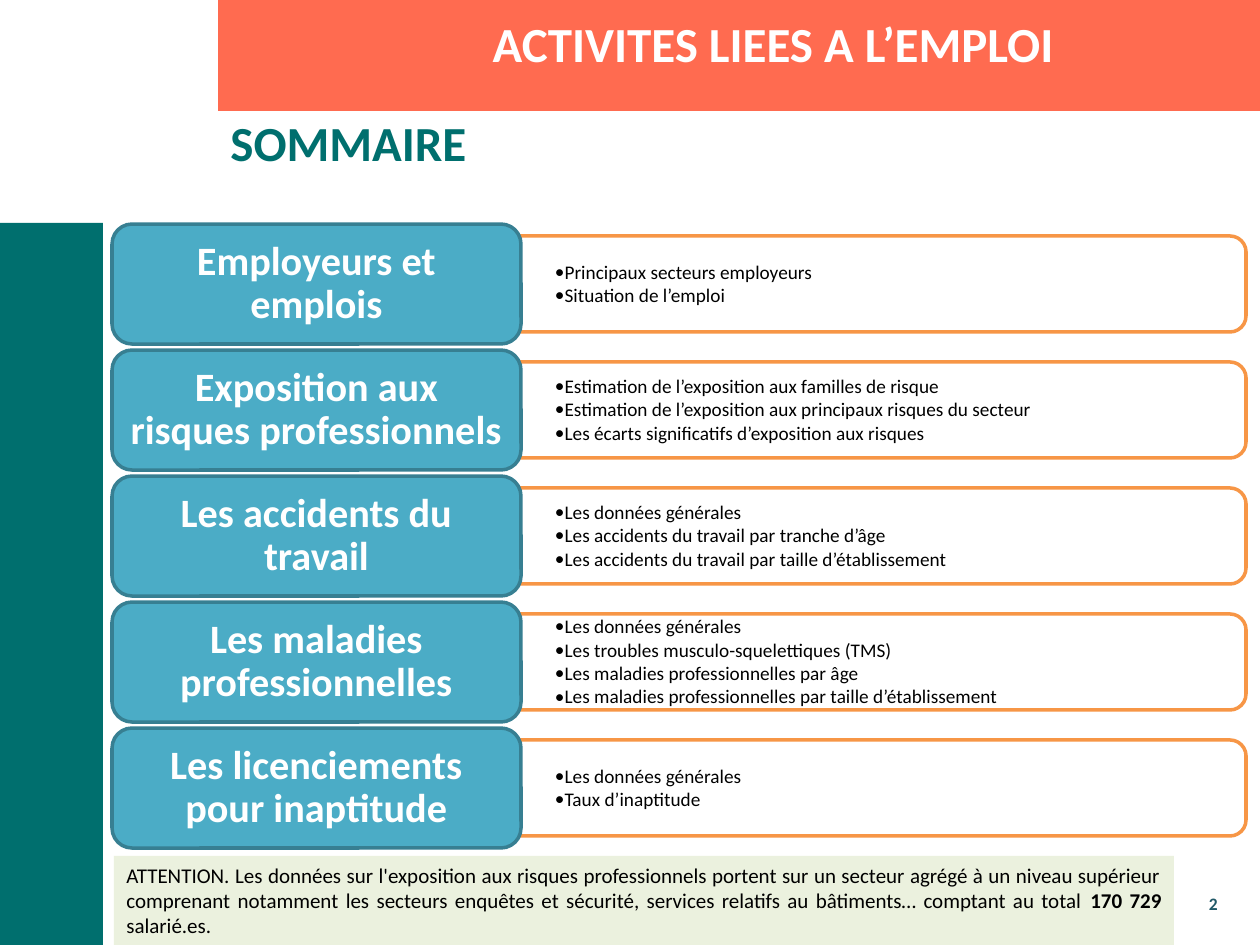
from dataclasses import dataclass

from lxml import etree
from pptx import Presentation
from pptx.dml.color import RGBColor
from pptx.enum.shapes import MSO_SHAPE
from pptx.enum.text import MSO_ANCHOR, PP_ALIGN
from pptx.oxml.ns import qn
from pptx.util import Emu, Pt

PX_PER_INCH = 126
FONT = "Calibri"
CORAL, GREEN, WHITE, BLACK = "FF6B50", "006F6E", "FFFFFF", "000000"
BLUE, BLUE_EDGE, ORANGE = "4BACC6", "377F92", "F79646"
PALE_GREEN, DARK_TEAL = "EBF1DE", "215968"
FIRST_ROW_TOP, ROW_PITCH = 224, 126


@dataclass(frozen=True)
class Box:
    """A rectangle in px."""
    left: int
    top: int
    width: int
    height: int

    def emu(self) -> list[Emu]:
        """Return the four lengths in EMU."""
        return [px(v) for v in (self.left, self.top, self.width, self.height)]


@dataclass(frozen=True)
class Chapter:
    """A chapter title with its topics."""
    title: str
    topics: tuple[str, ...]


CHAPTERS = (
    Chapter("Employeurs et emplois",
            ("Principaux secteurs employeurs", "Situation de l’emploi")),
    Chapter("Exposition aux risques professionnels",
            ("Estimation de l’exposition aux familles de risque",
             "Estimation de l’exposition aux principaux risques du secteur",
             "Les écarts significatifs d’exposition aux risques")),
    Chapter("Les accidents du travail",
            ("Les données générales",
             "Les accidents du travail par tranche d’âge",
             "Les accidents du travail par taille d’établissement")),
    Chapter("Les maladies professionnelles",
            ("Les données générales",
             "Les troubles musculo-squelettiques (TMS)",
             "Les maladies professionnelles par âge",
             "Les maladies professionnelles par taille d’établissement")),
    Chapter("Les licenciements pour inaptitude",
            ("Les données générales", "Taux d’inaptitude")),
)


def px(length: int) -> Emu:
    """Turn px into EMU."""
    return Emu(round(length * 914400 / PX_PER_INCH))


def color(value: str) -> RGBColor:
    """Turn a hex string into a colour."""
    return RGBColor.from_string(value)


def add_panel(slide, kind: MSO_SHAPE, box: Box, fill: str, edge: str | None = None):
    """Draw a filled shape with an optional outline."""
    panel = slide.shapes.add_shape(kind, *box.emu())
    panel.shadow.inherit = False
    panel.fill.solid()
    panel.fill.fore_color.rgb = color(fill)
    if edge:
        panel.line.color.rgb = color(edge)
        panel.line.width = Pt(2)
    else:
        panel.line.fill.background()
    return panel


def add_frame(slide, box: Box, anchor=MSO_ANCHOR.TOP):
    """Add a wrapping text box and return its frame."""
    frame = slide.shapes.add_textbox(*box.emu()).text_frame
    frame.word_wrap = True
    frame.vertical_anchor = anchor
    return frame


def add_run(paragraph, text: str, size: int, ink: str, bold: bool = False) -> None:
    """Append a styled run."""
    run = paragraph.add_run()
    run.text = text
    run.font.name = FONT
    run.font.size = Pt(size)
    run.font.bold = bold
    run.font.color.rgb = color(ink)


def add_line(slide, box: Box, text: str, size: int, ink: str, align: PP_ALIGN,
             anchor=MSO_ANCHOR.TOP):
    """Add a bold text of one paragraph and return the paragraph."""
    paragraph = add_frame(slide, box, anchor).paragraphs[0]
    paragraph.alignment = align
    add_run(paragraph, text, size, ink, True)
    return paragraph


def add_topics(slide, box: Box, topics: tuple[str, ...]) -> None:
    """Write the bulleted topics of a chapter."""
    frame = add_frame(slide, box, MSO_ANCHOR.MIDDLE)
    frame.margin_left = frame.margin_right = px(35)
    frame.margin_top = frame.margin_bottom = px(18)
    for index, topic in enumerate(topics):
        paragraph = frame.add_paragraph() if index else frame.paragraphs[0]
        properties = paragraph._p.get_or_add_pPr()
        properties.set("marL", str(px(8)))
        properties.set("indent", str(px(-8)))
        etree.SubElement(properties, qn("a:buFont"), typeface=FONT)
        etree.SubElement(properties, qn("a:buChar"), char="•")
        paragraph.level = 1
        paragraph.line_spacing = 0.9
        paragraph.space_after = Pt(1.5)
        paragraph.font.size = Pt(11)
        add_run(paragraph, topic, 11, BLACK)


def add_chapter(slide, top: int, chapter: Chapter) -> None:
    """Draw one row: the topics panel, then the title tile over its edge."""
    width, height = 726, 96
    center_x, center_y = 520 + width // 2, top + 60
    upright = Box(center_x - height // 2, center_y - width // 2, height, width)
    panel = add_panel(slide, MSO_SHAPE.ROUND_2_SAME_RECTANGLE, upright, WHITE, ORANGE)
    panel.rotation = 90
    add_topics(slide, Box(520, top + 17, 721, 87), chapter.topics)
    add_panel(slide, MSO_SHAPE.ROUNDED_RECTANGLE, Box(112, top, 409, 120), BLUE, BLUE_EDGE)
    title = add_line(slide, Box(118, top + 6, 397, 108), chapter.title, 23, WHITE,
                     PP_ALIGN.CENTER, MSO_ANCHOR.MIDDLE)
    title.line_spacing = 0.9


def add_warning(slide) -> None:
    """Draw the warning at the foot of the slide."""
    warning = add_panel(slide, MSO_SHAPE.RECTANGLE, Box(114, 856, 1060, 89), PALE_GREEN)
    frame = warning.text_frame
    frame.word_wrap = True
    frame.vertical_anchor = MSO_ANCHOR.TOP
    paragraph = frame.paragraphs[0]
    paragraph.alignment = PP_ALIGN.JUSTIFY
    add_run(paragraph, "ATTENTION. Les données sur l'exposition aux risques professionnels "
            "portent sur un secteur agrégé à un niveau supérieur comprenant notamment les "
            "secteurs enquêtes et sécurité, services relatifs au bâtiments… comptant au "
            "total ", 12, BLACK)
    add_run(paragraph, "170 729", 12, BLACK, True)
    add_run(paragraph, " salarié.es.", 12, BLACK)


def main() -> None:
    """Build the slide and save it."""
    deck = Presentation()
    deck.slide_width, deck.slide_height = px(1260), px(945)
    slide = deck.slides.add_slide(deck.slide_layouts[6])
    add_panel(slide, MSO_SHAPE.RECTANGLE, Box(218, 0, 1042, 111), CORAL)
    add_line(slide, Box(1101, 884, 129, 40), "2", 10, DARK_TEAL, PP_ALIGN.RIGHT,
             MSO_ANCHOR.MIDDLE)
    add_panel(slide, MSO_SHAPE.RECTANGLE, Box(0, 223, 103, 722), GREEN)
    add_line(slide, Box(218, 106, 1040, 107), "SOMMAIRE", 28, GREEN, PP_ALIGN.LEFT)
    for row, chapter in enumerate(CHAPTERS):
        add_chapter(slide, FIRST_ROW_TOP + row * ROW_PITCH, chapter)
    add_warning(slide)
    add_line(slide, Box(286, 7, 974, 72), "ACTIVITES LIEES A L’EMPLOI", 28, WHITE,
             PP_ALIGN.CENTER)
    deck.save("out.pptx")


if __name__ == "__main__":
    main()
